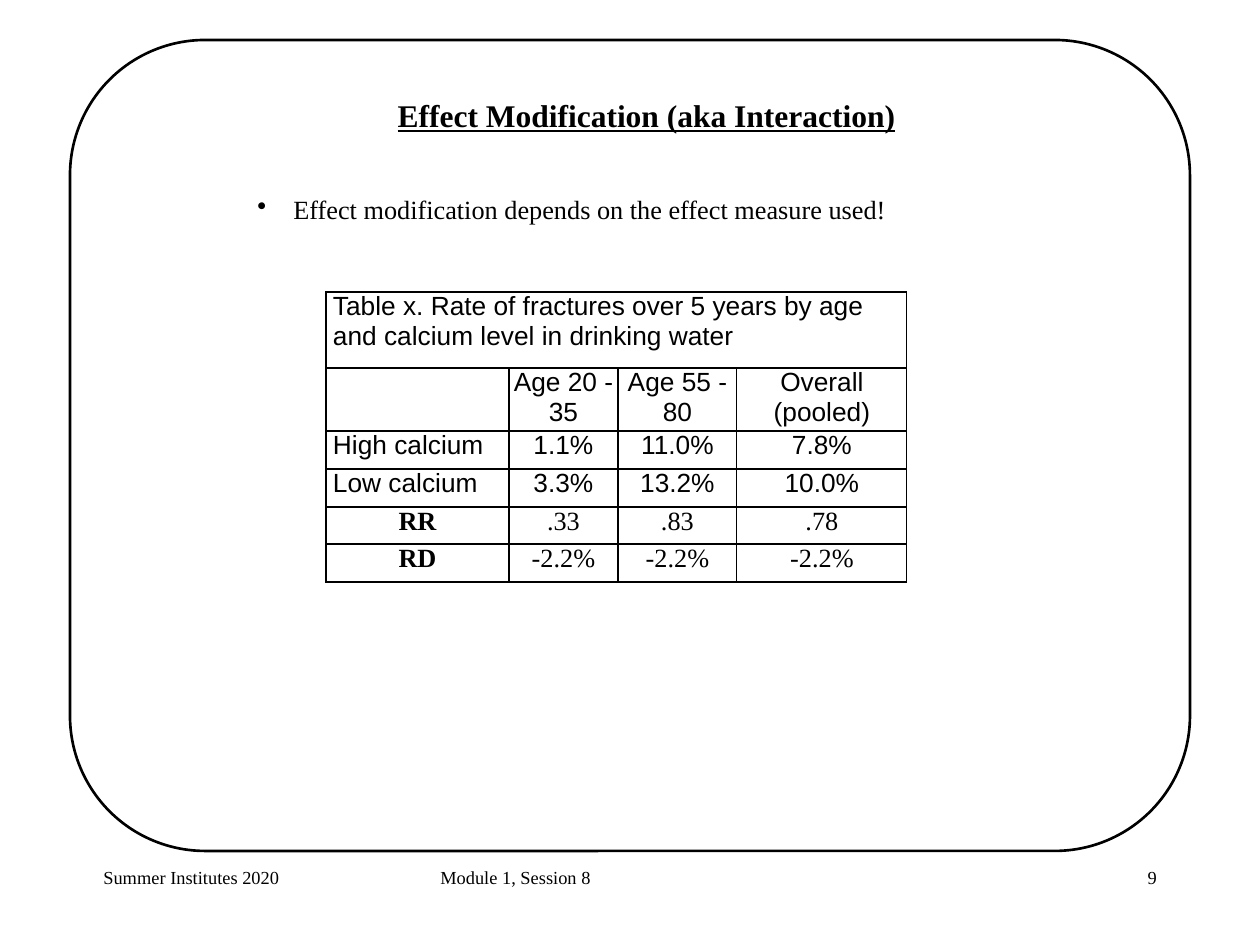
from lxml.etree import SubElement
from pptx import Presentation
from pptx.dml.color import RGBColor
from pptx.enum.shapes import MSO_SHAPE
from pptx.enum.text import MSO_ANCHOR, PP_ALIGN
from pptx.oxml import parse_xml
from pptx.oxml.ns import nsdecls, qn
from pptx.util import Pt

PX = 9676
BLACK = "000000"
SERIF = "Times New Roman"
SANS = "Arial"


def color(hex_code):
    return RGBColor.from_string(hex_code)


def write(frame, text, size, face, align=PP_ALIGN.LEFT, bold=False):
    frame.text = text
    frame.word_wrap = True
    frame.vertical_anchor = MSO_ANCHOR.TOP
    paragraph = frame.paragraphs[0]
    paragraph.alignment = align
    paragraph.font.size = Pt(size)
    paragraph.font.name = face
    paragraph.font.bold = bold
    paragraph.font.color.rgb = color(BLACK)
    return paragraph


presentation = Presentation()
presentation.slide_width = 1260 * PX
presentation.slide_height = 945 * PX
slide = presentation.slides.add_slide(presentation.slide_layouts[5])

border = slide.shapes.add_shape(
    MSO_SHAPE.ROUNDED_RECTANGLE, 70 * PX, 40 * PX, 1120 * PX, 811 * PX)
border.shadow.inherit = False
border.fill.background()
border.line.color.rgb = color(BLACK)
border.line.width = Pt(2)

footers = [
    ("Summer Institutes 2020", 94, 263, PP_ALIGN.LEFT),
    ("Module 1, Session 8", 431, 399, PP_ALIGN.LEFT),
    ("9", 903, 263, PP_ALIGN.RIGHT),
]
for text, left, width, align in footers:
    footer = slide.shapes.add_textbox(left * PX, 861 * PX, width * PX, 63 * PX)
    write(footer.text_frame, text, 14, SERIF, align)

heading = slide.shapes.title
heading.left, heading.top, heading.width, heading.height = (
    367 * PX, 91 * PX, 559 * PX, 47 * PX)
heading_line = write(heading.text_frame, "Effect Modification (aka Interaction)",
                     24, SERIF, PP_ALIGN.CENTER, True)
heading_line.font.underline = True

message = slide.shapes.add_textbox(248 * PX, 189 * PX, 764 * PX, 42 * PX)
message_line = write(message.text_frame,
                     "Effect modification depends on the effect measure used!",
                     20, SERIF)
bullet_properties = message_line._p.get_or_add_pPr()
bullet_properties.set("marL", str(36 * PX))
bullet_properties.set("indent", str(-36 * PX))
bullet_properties.insert(0, parse_xml(f'<a:buChar {nsdecls("a")} char="•"/>'))

caption = "Table x. Rate of fractures over 5 years by age and calcium level in drinking water"
rates = [
    [caption, "", "", ""],
    ["", "Age 20 - 35", "Age 55 - 80", "Overall (pooled)"],
    ["High calcium", "1.1%", "11.0%", "7.8%"],
    ["Low calcium", "3.3%", "13.2%", "10.0%"],
    ["RR", ".33", ".83", ".78"],
    ["RD", "-2.2%", "-2.2%", "-2.2%"],
]
column_widths = [183, 109, 119, 170]
row_heights = [76, 59, 38, 38, 37, 38]
fractures = slide.shapes.add_table(
    len(rates), len(column_widths), 326 * PX, 292 * PX,
    sum(column_widths) * PX, sum(row_heights) * PX).table
fractures.first_row = False
fractures.horz_banding = False
for column, width in zip(fractures.columns, column_widths):
    column.width = width * PX
for row, height in zip(fractures.rows, row_heights):
    row.height = height * PX
fractures.cell(0, 0).merge(fractures.cell(0, 3))

for r, values in enumerate(rates):
    for c, value in enumerate(values):
        cell = fractures.cell(r, c)
        row_label = c == 0 and r < 4
        cell.margin_left = 7 * PX if row_label else 0
        cell.margin_right = cell.margin_top = cell.margin_bottom = 0
        cell_properties = cell._tc.get_or_add_tcPr()
        for side in ("lnL", "lnR", "lnT", "lnB"):
            edge = SubElement(cell_properties, qn(f"a:{side}"), w=str(Pt(1)))
            edge_fill = SubElement(edge, qn("a:solidFill"))
            SubElement(edge_fill, qn("a:srgbClr"), val=BLACK)
        cell.fill.background()
        if value:
            write(cell.text_frame, value, 20, SERIF if r >= 4 else SANS,
                  PP_ALIGN.LEFT if row_label else PP_ALIGN.CENTER,
                  r >= 4 and c == 0)

presentation.save("out.pptx")
